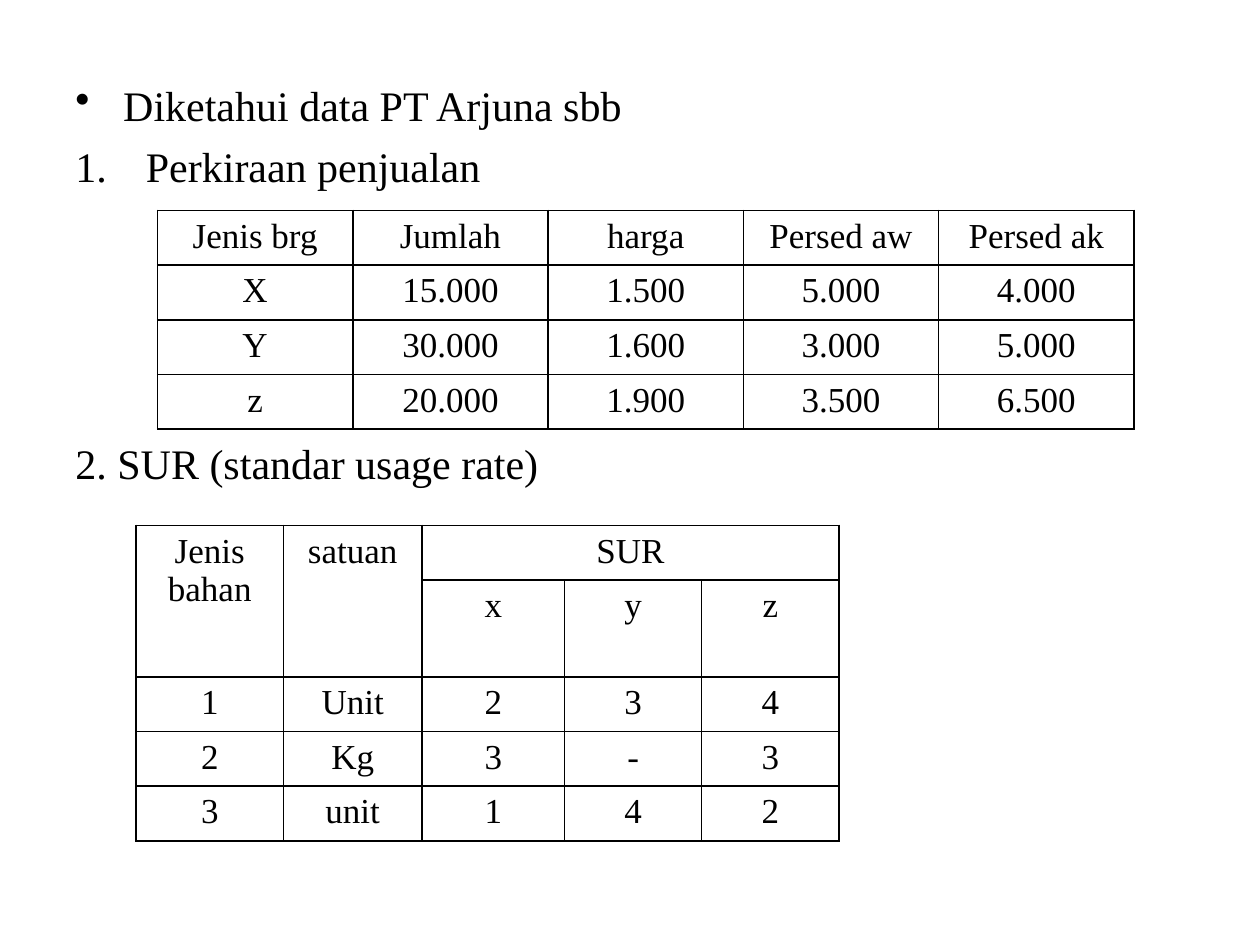
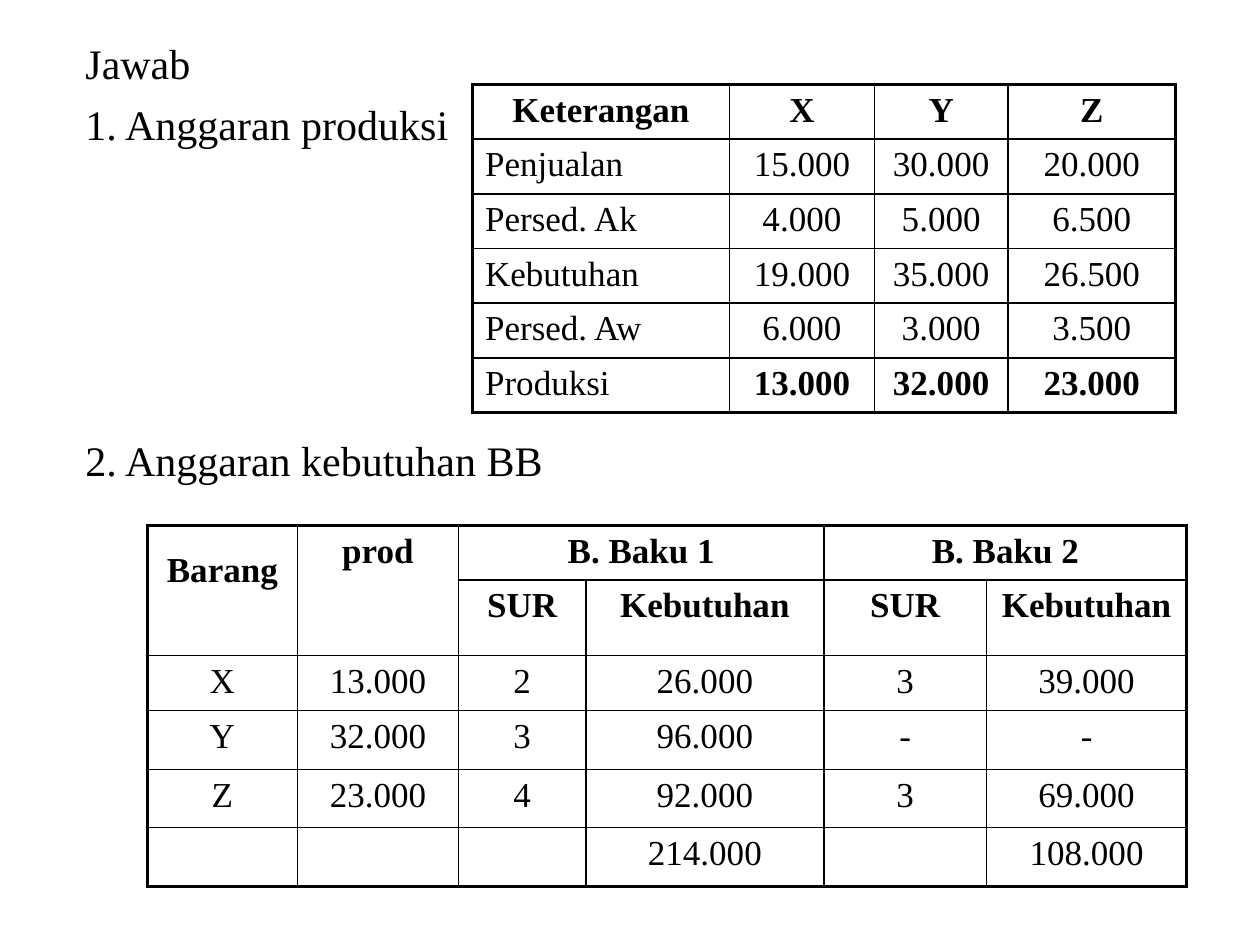
from lxml import etree
from pptx import Presentation
from pptx.dml.color import RGBColor
from pptx.enum.text import PP_ALIGN
from pptx.oxml.ns import qn
from pptx.util import Inches, Pt

BLACK = RGBColor(0, 0, 0)
WHITE = RGBColor(255, 255, 255)
FONT = "Times New Roman"
BODY_SIZE, CELL_SIZE = 24, 20
THIN, THICK = 1, 2.25
FIRST_GAP, LINE_GAP = 2, 6

# Merges are (row, column, last row, last column).
SALES = dict(
    at=(1.25, 1.67), columns=[1.55] * 5, heights=[0.41] * 4,
    rows=[
        ["Jenis brg", "Jumlah", "harga", "Persed aw", "Persed ak"],
        ["X", "15.000", "1.500", "5.000", "4.000"],
        ["Y", "30.000", "1.600", "3.000", "5.000"],
        ["z", "20.000", "1.900", "3.500", "6.500"],
    ],
)
USAGE_RATES = dict(
    at=(1.08, 4.17), columns=[1.17, 1.1, 1.13, 1.09, 1.09],
    heights=[0.35, 0.35, 0.41, 0.41, 0.41],
    merges=[(0, 0, 1, 0), (0, 1, 1, 1), (0, 2, 0, 4)],
    rows=[
        ["Jenis bahan", "satuan", "SUR", "", ""],
        ["", "", "x", "y", "z"],
        ["1", "Unit", "2", "3", "4"],
        ["2", "Kg", "3", "-", "3"],
        ["3", "unit", "1", "4", "2"],
    ],
)
PRODUCTION = dict(
    at=(3.75, 0.67), columns=[2.04, 1.15, 1.06, 1.33], heights=[0.38] * 6,
    bold_headers=1, labels_and_totals=True, frame=THICK,
    rows=[
        ["Keterangan", "X", "Y", "Z"],
        ["Penjualan", "15.000", "30.000", "20.000"],
        ["Persed. Ak", "4.000", "5.000", "6.500"],
        ["Kebutuhan", "19.000", "35.000", "26.500"],
        ["Persed. Aw", "6.000", "3.000", "3.500"],
        ["Produksi", "13.000", "32.000", "23.000"],
    ],
)
MATERIALS = dict(
    at=(1.17, 4.17), columns=[1.19, 1.28, 1.01, 1.89, 1.29, 1.59],
    heights=[0.33, 0.55, 0.43, 0.47, 0.46, 0.47],
    merges=[(0, 0, 1, 0), (0, 1, 1, 1), (0, 2, 0, 3), (0, 4, 0, 5)],
    bold_headers=2, frame=THICK, line_spacing={"Barang": 1.5},
    rows=[
        ["Barang", "prod", "B. Baku 1", "", "B. Baku 2", ""],
        ["", "", "SUR", "Kebutuhan", "SUR", "Kebutuhan"],
        ["X", "13.000", "2", "26.000", "3", "39.000"],
        ["Y", "32.000", "3", "96.000", "-", "-"],
        ["Z", "23.000", "4", "92.000", "3", "69.000"],
        ["", "", "", "214.000", "", "108.000"],
    ],
)
SLIDES = [
    dict(
        text_at=(0.5, 0.58),
        lines=[
            ("Diketahui data PT Arjuna sbb",
             dict(indent=0.38, bullet=("a:buChar", "char", "•"), before=FIRST_GAP)),
            ("Perkiraan penjualan",
             dict(indent=0.56, bullet=("a:buAutoNum", "type", "arabicPeriod"), before=LINE_GAP)),
            ("2. SUR (standar usage rate)", dict(indent=0.56, before=141)),
        ],
        tables=[SALES, USAGE_RATES],
    ),
    dict(
        text_at=(0.58, 0.25),
        lines=[
            ("Jawab", dict(indent=0.38, before=FIRST_GAP)),
            ("1. Anggaran produksi", dict(indent=0.56, before=LINE_GAP)),
            ("2. Anggaran kebutuhan BB", dict(indent=0.38, before=163)),
        ],
        tables=[PRODUCTION, MATERIALS],
    ),
]


def write(paragraph, text, size=BODY_SIZE, bold=False, align=PP_ALIGN.LEFT,
          before=0, spacing=None, indent=0, bullet=None):
    paragraph.alignment = align
    paragraph.space_before = Pt(before)
    paragraph.line_spacing = spacing
    paragraph.font.size = Pt(size)
    if text:
        run = paragraph.add_run()
        run.text = text
        run.font.name = FONT
        run.font.size = Pt(size)
        run.font.bold = bold
        run.font.color.rgb = BLACK
    properties = paragraph._p.get_or_add_pPr()
    if indent:
        properties.set("marL", str(Inches(indent)))
        properties.set("indent", str(-Inches(indent)))
    if bullet:
        tag, attribute, value = bullet
        mark = etree.Element(qn(tag))
        mark.set(attribute, value)
        # Bullets come before the default run properties.
        properties.find(qn("a:defRPr")).addprevious(mark)


def set_borders(cell, widths):
    """Draw the sides of a cell; widths maps L, R, T and B, in that order, to points."""
    properties = cell._tc.get_or_add_tcPr()
    for side, width in widths.items():
        line = etree.SubElement(properties, qn(f"a:ln{side}"), w=str(Pt(width)))
        fill = etree.SubElement(line, qn("a:solidFill"))
        etree.SubElement(fill, qn("a:srgbClr"), val=str(BLACK))


def add_grid(slide, at, columns, heights, rows, merges=(), bold_headers=0,
             labels_and_totals=False, frame=THIN, line_spacing=None):
    """Add a table; labels_and_totals left-aligns column one and bolds the last row's values."""
    left, top = at
    table = slide.shapes.add_table(
        len(rows), len(columns), Inches(left), Inches(top),
        Inches(sum(columns)), Inches(sum(heights))).table
    table.first_row = table.horz_banding = False
    for column, width in zip(table.columns, columns):
        column.width = Inches(width)
    for row, height in zip(table.rows, heights):
        row.height = Inches(height)
    for first_row, first_column, last_row, last_column in merges:
        table.cell(first_row, first_column).merge(table.cell(last_row, last_column))

    for r, row in enumerate(rows):
        for c, text in enumerate(row):
            cell = table.cell(r, c)
            is_label = labels_and_totals and c == 0 and r > 0
            is_total = labels_and_totals and c > 0 and r == len(rows) - 1
            write(cell.text_frame.paragraphs[0], text, size=CELL_SIZE,
                  bold=r < bold_headers or is_total,
                  align=PP_ALIGN.LEFT if is_label else PP_ALIGN.CENTER,
                  spacing=(line_spacing or {}).get(text))
            on_frame = {
                "L": c == 0,
                "R": c + cell.span_width == len(columns),
                "T": r == 0,
                "B": r + cell.span_height == len(rows),
            }
            set_borders(cell, {side: frame if outer else THIN
                               for side, outer in on_frame.items()})
            cell.fill.background()


def add_body(slide, at, lines):
    left, top = at
    frame = slide.shapes.add_textbox(
        Inches(left), Inches(top), Inches(9), Inches(6.12)).text_frame
    frame.word_wrap = True
    for number, (text, text_format) in enumerate(lines):
        paragraph = frame.add_paragraph() if number else frame.paragraphs[0]
        write(paragraph, text, **text_format)


def main():
    presentation = Presentation()
    presentation.slide_width, presentation.slide_height = Inches(10), Inches(7.5)
    for content in SLIDES:
        slide = presentation.slides.add_slide(presentation.slide_layouts[6])
        slide.background.fill.solid()
        slide.background.fill.fore_color.rgb = WHITE
        add_body(slide, content["text_at"], content["lines"])
        for table in content["tables"]:
            add_grid(slide, **table)
    presentation.save("out.pptx")


if __name__ == "__main__":
    main()
